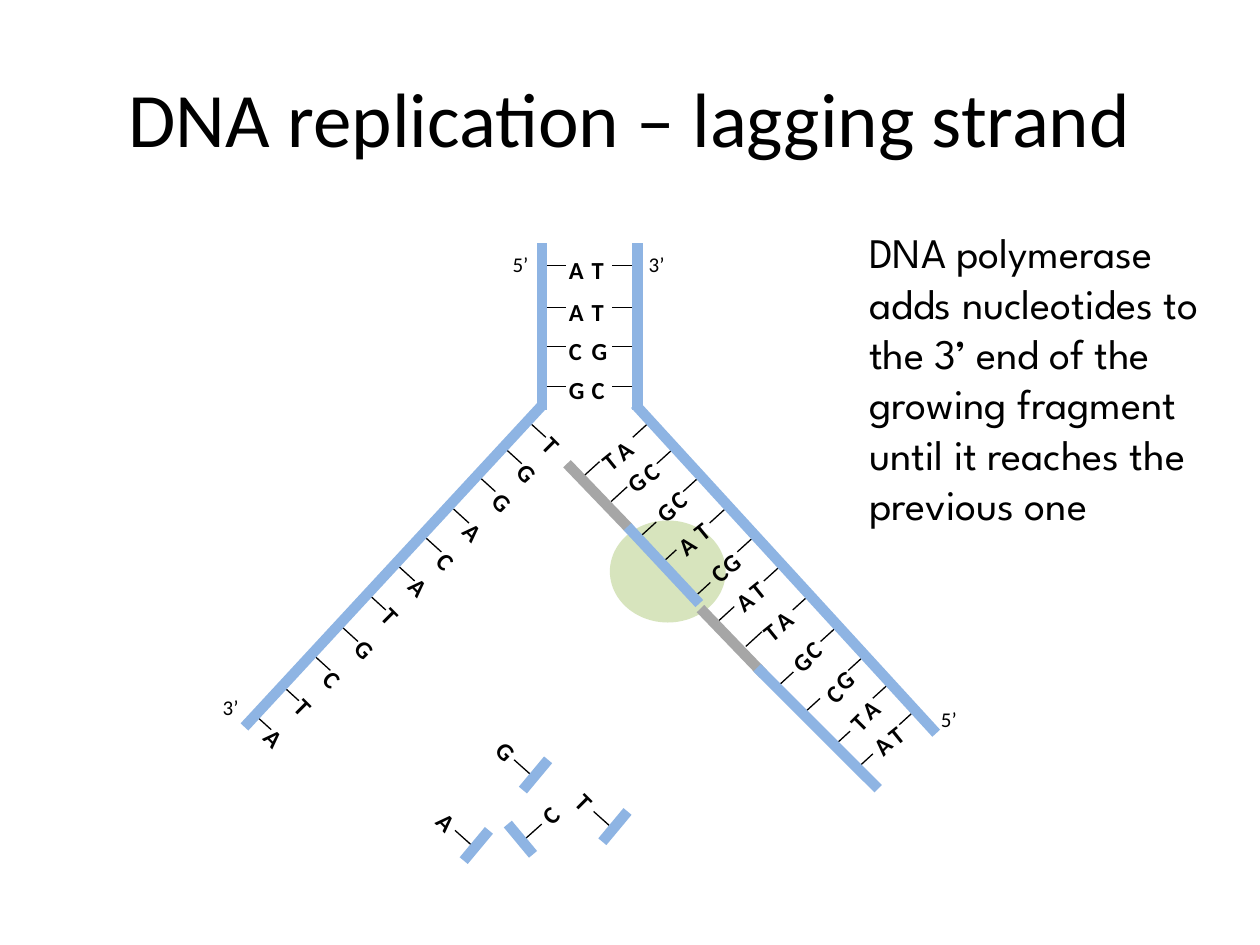
from lxml.etree import SubElement
from pptx import Presentation
from pptx.dml.color import RGBColor
from pptx.enum.shapes import MSO_CONNECTOR as Connector, MSO_SHAPE as Shape
from pptx.enum.text import MSO_ANCHOR as Anchor, MSO_AUTO_SIZE as AutoSize, PP_ALIGN as Align
from pptx.oxml.ns import qn
from pptx.util import Pt

BLACK, BLUE, GRAY, GREEN = "000000", "8EB4E3", "A6A6A6", "D7E4BD"
LETTER_SIZE = 22.3
MIRROR_SUM = 673.5  # left x + right x of matching points on the fork

STEM_PAIRS = [("AT", 139.5, 151.9), ("AT", 163.4, 175.7),
              ("CG", 185.8, 198), ("GC", 208.1, 221)]

# Letter, left, top, rotation
LEFT_TEMPLATE = [
    ("T", 306.7, 241.2, 45), ("G", 292.3, 256.3, 48.2), ("G", 277.9, 272.9, 45),
    ("A", 261.4, 290.2, 45), ("C", 246.2, 307.4, 45), ("A", 230.4, 321.8, 45),
    ("T", 214.6, 339.1, 45), ("G", 199.4, 357.1, 45), ("C", 181.4, 375.1, 45),
    ("T", 164.9, 391, 45), ("A", 147.6, 408.2, 45),
]
RIGHT_TEMPLATE = [
    ("A", 342.7, 243.4, 321), ("C", 358.6, 255.6, 321), ("C", 374.4, 271.4, 321),
    ("T", 388.1, 289.4, 321), ("G", 403.9, 308.2, 321), ("T", 419.8, 323.3, 321),
    ("A", 434.2, 340.6, 321), ("C", 451.4, 357.1, 321), ("G", 468.7, 375.1, 321),
    ("A", 483.8, 391.7, 321), ("T", 499, 406.1, 321),
]
LAGGING_STRAND = [
    ("T", 335.5, 249.1, 321), ("G", 349.9, 262.1, 321), ("G", 366.5, 279.4, 315),
    ("A", 378.7, 298.1, 321), ("C", 397.4, 313.9, 315), ("A", 411.8, 329.8, 321),
    ("T", 427.7, 347, 321), ("G", 444.2, 365, 315), ("C", 463, 383, 315),
    ("T", 477.4, 398.9, 315), ("A", 490.3, 412.6, 315),
]

# Points where the bonds leave the backbones
FORK_BONDS = [(303.1, 241.9), (289.4, 257), (274.3, 272.9), (259.2, 290.9),
              (243.4, 307.4), (228.2, 324), (211.7, 340.6), (195.8, 358.6),
              (180, 375.1)]
LEFT_END_BONDS = [(162, 392.4), (146.2, 409)]
RIGHT_END_BONDS = [(507.6, 391), (522.7, 406.1)]
LAGGING_BONDS = [(333.4, 272.2), (349.2, 286.6), (365.8, 306.7), (377.3, 322.6),
                 (396.7, 341.3), (410.4, 355), (426.2, 369.4), (444.2, 392.4),
                 (459.4, 407.5), (476.6, 426.2), (489.6, 439.2)]

BACKBONES = [
    (309.6, 139, 309.6, 234, BLUE), (310.3, 231.1, 139.7, 415.4, BLUE),
    (364.3, 139, 364.3, 234, BLUE), (362.9, 231.1, 535, 419, BLUE),
    (324, 265, 359.3, 301.7, GRAY), (400.3, 347.8, 436.3, 385.2, GRAY),
    (432.7, 381.6, 501.8, 450.7, BLUE), (358.6, 301, 399.6, 344.9, BLUE),
]
END_LABELS = [("5’", 285.8, 138.2), ("3’", 120.2, 391),
              ("5’", 530.6, 398.2), ("3’", 363.6, 138.2)]

# Letter, top of backbone piece, side on which the base sits
FREE_NUCLEOTIDES = [("G", 313.2, 434.2, -1), ("A", 279.4, 474.5, -1),
                    ("T", 358.6, 463.7, -1), ("C", 290.2, 470.9, 1)]


def color(value):
    return RGBColor.from_string(value)


def add_text(slide, text, box, size, font="Calibri", bold=False):
    shape = slide.shapes.add_textbox(*map(Pt, box))
    shape.text_frame.word_wrap = True
    paragraph = shape.text_frame.paragraphs[0]
    run = paragraph.add_run()
    run.text = text
    run.font.size = Pt(size)
    run.font.name = font
    run.font.bold = bold
    run.font.color.rgb = color(BLACK)
    return shape


def add_label(slide, text, left, top, width, size, bold=False):
    """Add a short diagram label with the diagram's line spacing."""
    shape = add_text(slide, text, (left, top, width, LETTER_SIZE), size, bold=bold)
    paragraph = shape.text_frame.paragraphs[0]
    paragraph.line_spacing = 1.15
    paragraph.space_after = Pt(10)
    return shape


def add_base(slide, letter, left, top, rotation=0):
    shape = add_label(slide, letter, left, top, LETTER_SIZE, 14, bold=True)
    shape.rotation = rotation


def add_line(slide, x1, y1, x2, y2, line_color=BLACK, width=0.75):
    line = slide.shapes.add_connector(Connector.STRAIGHT, *map(Pt, (x1, y1, x2, y2)))
    line.line.color.rgb = color(line_color)
    line.line.width = Pt(width)
    SubElement(line._element.spPr, qn("a:effectLst"))


def add_bonds(slide, starts, dx, dy):
    for x, y in starts:
        add_line(slide, x, y, x + dx, y + dy)


def add_polymerase(slide):
    ellipse = slide.shapes.add_shape(Shape.OVAL, Pt(348.5), Pt(297.4), Pt(66.2), Pt(58.3))
    ellipse.shadow.inherit = False
    ellipse.fill.solid()
    ellipse.fill.fore_color.rgb = color(GREEN)
    ellipse.line.fill.background()


def add_stem(slide):
    for pair, top, bond_y in STEM_PAIRS:
        for letter, left in zip(pair, (318, 331)):
            add_base(slide, letter, left, top)
        add_line(slide, 312.2, bond_y, 323.6, bond_y)
        add_line(slide, MIRROR_SUM - 312.2, bond_y, 350, bond_y)


def add_free_nucleotide(slide, letter, x, y, side):
    add_base(slide, letter, x + side * 22 - LETTER_SIZE / 2, y - 18.7,
             45 if side < 0 else 315)
    add_line(slide, x + side * 10, y + 8.4, x + side * 19.4, y)
    add_line(slide, x, y, x + side * 14.4, y + 17.3, BLUE, 6)


def main():
    presentation = Presentation()
    presentation.slide_width, presentation.slide_height = Pt(720), Pt(540)
    slide = presentation.slides.add_slide(presentation.slide_layouts[6])

    add_polymerase(slide)
    title = add_text(slide, "DNA replication – lagging strand", (36, 21.6, 648, 90), 44)
    title.text_frame.vertical_anchor = Anchor.MIDDLE
    title.text_frame.paragraphs[0].alignment = Align.CENTER

    add_stem(slide)
    for base in LEFT_TEMPLATE + RIGHT_TEMPLATE + LAGGING_STRAND:
        add_base(slide, *base)
    for text, left, top in END_LABELS:
        add_label(slide, text, left, top, 27.4, 12)

    mirrored_bonds = [(MIRROR_SUM - x, y) for x, y in FORK_BONDS]
    add_bonds(slide, FORK_BONDS + LEFT_END_BONDS, 8.8, 8)
    add_bonds(slide, mirrored_bonds + RIGHT_END_BONDS, -8.8, 8)
    add_bonds(slide, LAGGING_BONDS, 9.2, -8.4)
    for nucleotide in FREE_NUCLEOTIDES:
        add_free_nucleotide(slide, *nucleotide)
    for backbone in BACKBONES:
        add_line(slide, *backbone, width=6)

    explanation = add_text(
        slide,
        "DNA polymerase adds nucleotides to the 3’ end of the growing fragment "
        "until it reaches the previous one",
        (489.6, 126, 224.6, 211), 24, "League Spartan")
    explanation.text_frame.auto_size = AutoSize.SHAPE_TO_FIT_TEXT

    presentation.save("out.pptx")


if __name__ == "__main__":
    main()
